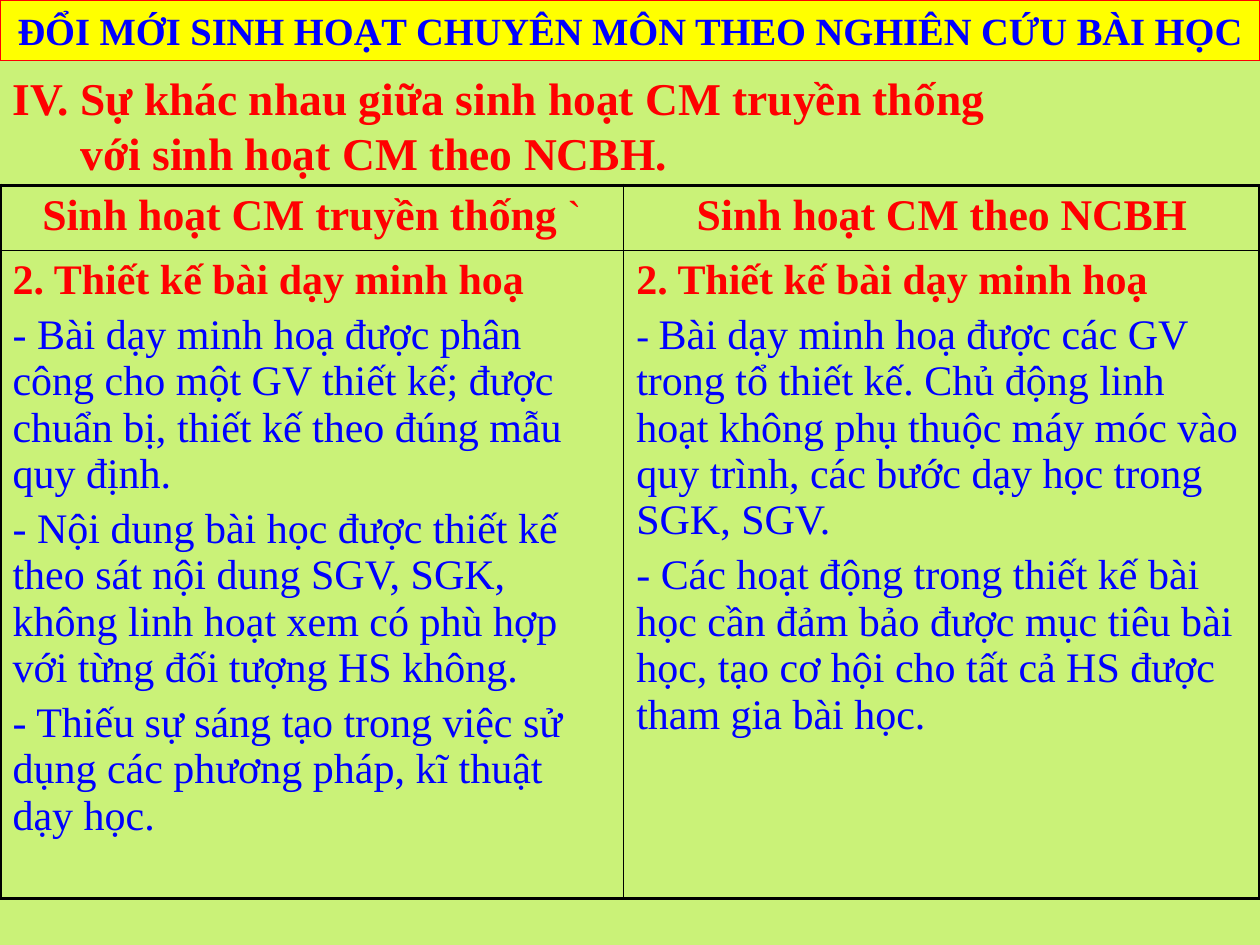
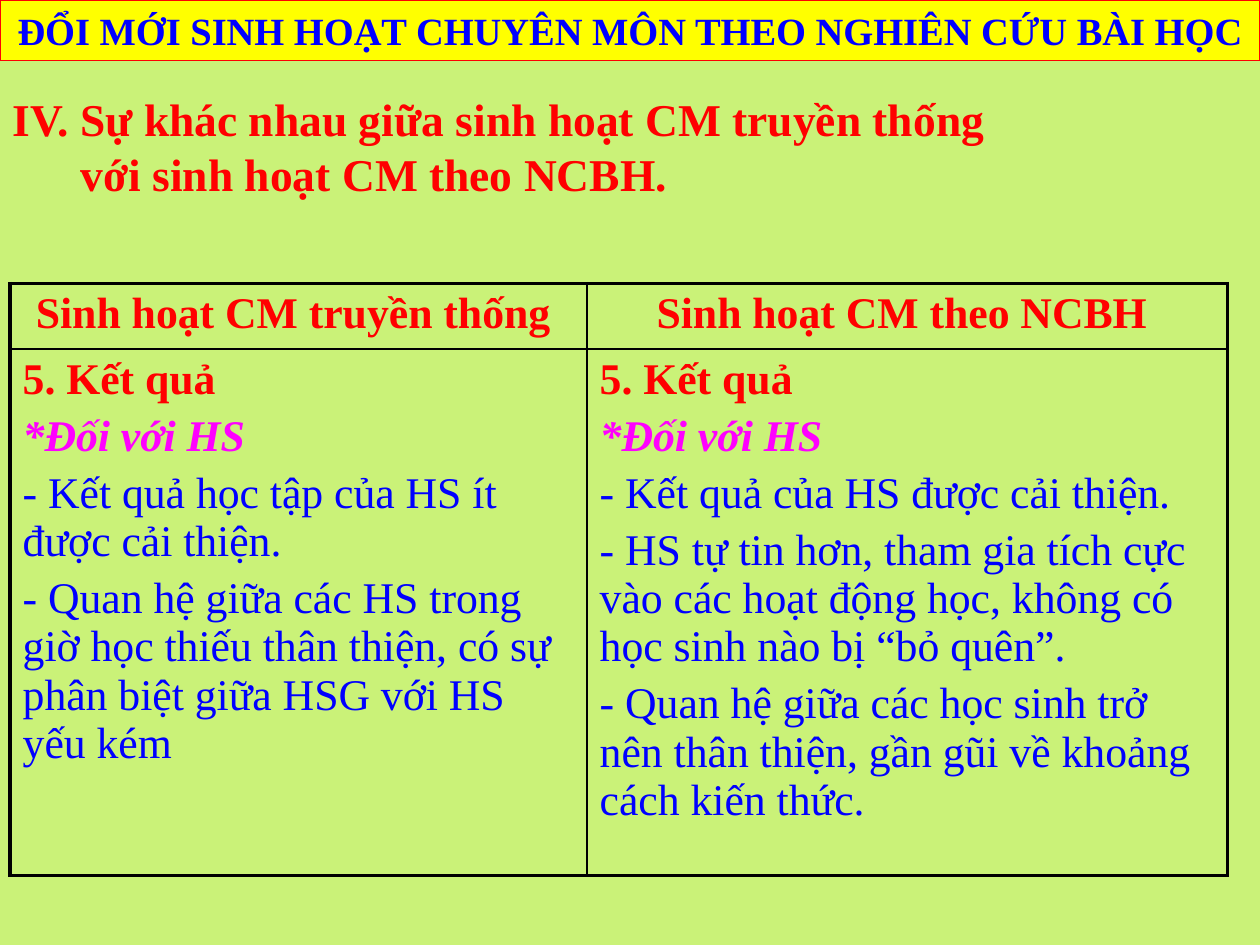
import dataclasses
import typing

import lxml.etree
import pptx
import pptx.dml.color
import pptx.enum.dml
import pptx.enum.shapes
import pptx.enum.text
import pptx.oxml.ns
import pptx.util

WIDTH, HEIGHT = pptx.util.Inches(10), pptx.util.Inches(7.5)
COLUMN, ROW = WIDTH / 10, HEIGHT / 7.5
FONT = "Times New Roman"
GREEN, YELLOW, RED = "CAF278", "FFFF00", "FF0000"
BLUE, MAGENTA, BLACK = "0000FF", "FF00FF", "000000"
OUTER, INNER = 2.25, 1
HEADER_ROWS = 0.52
HEADER_SIZE = 25
BANNER = "ĐỔI MỚI SINH HOẠT CHUYÊN MÔN THEO NGHIÊN CỨU BÀI HỌC"
SECTION = (
    "IV. Sự khác nhau giữa sinh hoạt CM truyền thống",
    "với sinh hoạt CM theo NCBH.",
)
LEFT = pptx.enum.text.PP_ALIGN.LEFT
CENTER = pptx.enum.text.PP_ALIGN.CENTER


class Style(typing.NamedTuple):
    color: str
    bold: bool = False
    italic: bool = False


HEADING = Style(RED, bold=True)
SUBHEADING = Style(MAGENTA, bold=True, italic=True)
POINT = Style(BLUE)
EMPHASIS = Style(BLUE, bold=True)


class Stretch(typing.NamedTuple):
    """Text that may depart from its paragraph's size and weight."""
    text: str
    size: float | None = None
    bold: bool | None = None


class Line(typing.NamedTuple):
    style: Style
    stretches: tuple[Stretch, ...]


def line(style: Style, text: str) -> Line:
    return Line(style, (Stretch(text),))


@dataclasses.dataclass(frozen=True)
class Comparison:
    """One slide; positions are in grid columns and rows."""
    section_top: float
    left: float
    top: float
    column_widths: tuple[float, float]
    body_rows: float
    body_size: float
    headers: tuple[Line, Line]
    bodies: tuple[tuple[Line, ...], tuple[Line, ...]]


COMPARISONS = (
    Comparison(
        section_top=0.5, left=0, top=1.47, column_widths=(4.95, 5.05),
        body_rows=5.14, body_size=24,
        headers=(
            Line(HEADING, (Stretch("Sinh hoạt CM truyền thống"),
                           Stretch(" `", 24, False))),
            line(HEADING, "Sinh hoạt CM theo NCBH"),
        ),
        bodies=(
            (
                line(HEADING, "2. Thiết kế bài dạy minh hoạ"),
                line(POINT, "- Bài dạy minh hoạ được phân công cho một GV thiết kế; "
                            "được chuẩn bị, thiết kế theo đúng mẫu quy định."),
                line(POINT, "- Nội dung bài học được thiết kế theo sát nội dung SGV, SGK, "
                            "không linh hoạt xem có phù hợp với từng đối tượng HS không."),
                line(POINT, "- Thiếu sự sáng tạo trong việc sử dụng các phương pháp, "
                            "kĩ thuật dạy học."),
            ),
            (
                line(HEADING, "2. Thiết kế bài dạy minh hoạ"),
                Line(POINT, (
                    Stretch("- ", 22),
                    Stretch("Bài dạy minh hoạ được các GV trong tổ thiết kế. Chủ động "
                            "linh hoạt không phụ thuộc máy móc vào quy trình, các bước "
                            "dạy học trong SGK, SGV."),
                )),
                line(POINT, "- Các hoạt động trong thiết kế bài học cần đảm bảo được mục "
                            "tiêu bài học, tạo cơ hội cho tất cả HS được tham gia bài học."),
            ),
        ),
    ),
    Comparison(
        section_top=0.67, left=0.08, top=2.25, column_widths=(4.58, 5.08),
        body_rows=4.18, body_size=25,
        headers=(
            line(HEADING, "Sinh hoạt CM truyền thống "),
            line(HEADING, "Sinh hoạt CM theo NCBH "),
        ),
        bodies=(
            (
                line(HEADING, "5. Kết quả"),
                line(SUBHEADING, "*Đối với HS"),
                line(POINT, "- Kết quả học tập của HS ít được cải thiện."),
                line(POINT, "- Quan hệ giữa các HS trong giờ học thiếu thân thiện, "
                            "có sự phân biệt giữa HSG với HS yếu kém"),
            ),
            (
                line(HEADING, "5. Kết quả"),
                line(SUBHEADING, "*Đối với HS"),
                line(POINT, "- Kết quả của HS được cải thiện."),
                line(POINT, "- HS tự tin hơn, tham gia tích cực vào các hoạt động học, "
                            "không có học sinh nào bị “bỏ quên”."),
                line(POINT, "- Quan hệ giữa các học sinh trở nên thân thiện, gần gũi "
                            "về khoảng cách kiến thức."),
            ),
        ),
    ),
)


def across(columns: float) -> int:
    return round(columns * COLUMN)


def down(rows: float) -> int:
    return round(rows * ROW)


def paint(fill, color: str) -> None:
    fill.solid()
    fill.fore_color.rgb = pptx.dml.color.RGBColor.from_string(color)


def write(frame, lines: typing.Sequence[Line], size: float, alignment=LEFT) -> None:
    frame.word_wrap = True
    for index, item in enumerate(lines):
        paragraph = frame.add_paragraph() if index else frame.paragraphs[0]
        paragraph.alignment = alignment
        if index:
            paragraph.space_before = pptx.util.Pt(size * 0.2)
        font = paragraph.font
        font.name, font.size = FONT, pptx.util.Pt(size)
        font.bold, font.italic = item.style.bold, item.style.italic
        paint(font.fill, item.style.color)
        for stretch in item.stretches:
            run = paragraph.add_run()
            run.text = stretch.text
            if stretch.size is not None:
                run.font.size = pptx.util.Pt(stretch.size)
            if stretch.bold is not None:
                run.font.bold = stretch.bold


def add_banner(slide) -> None:
    banner = slide.shapes.add_shape(
        pptx.enum.shapes.MSO_SHAPE.RECTANGLE, 0, 0, WIDTH, down(0.48))
    banner.shadow.inherit = False
    paint(banner.fill, YELLOW)
    paint(banner.line.fill, RED)
    banner.line.width = pptx.util.Pt(0.75)
    banner.text_frame.vertical_anchor = pptx.enum.text.MSO_ANCHOR.MIDDLE
    write(banner.text_frame, [line(EMPHASIS, BANNER)], 22, CENTER)


def place_section_title(slide, top: float) -> None:
    title = slide.shapes.title
    title.left, title.top, title.width, title.height = 0, down(top), WIDTH, down(0.97)
    frame = title.text_frame
    frame.auto_size = pptx.enum.text.MSO_AUTO_SIZE.NONE
    frame.vertical_anchor = pptx.enum.text.MSO_ANCHOR.TOP
    write(frame, [line(HEADING, text) for text in SECTION], 26)
    for paragraph in frame.paragraphs:
        paragraph.space_before = pptx.util.Pt(0)
        paragraph.line_spacing = pptx.util.Pt(31.4)
    indented = frame.paragraphs[1]._p.get_or_add_pPr()
    indented.set("marL", str(across(0.54)))
    indented.set("indent", "0")


def set_borders(cell, row: int, column: int) -> None:
    """Draw thick edges around the 2 × 2 table and thin ones inside it."""
    properties = cell._tc.get_or_add_tcPr()
    outer_edges = {"lnL": column == 0, "lnR": column == 1,
                   "lnT": row == 0, "lnB": row == 1}
    for position, (edge, is_outer) in enumerate(outer_edges.items()):
        weight = pptx.util.Pt(OUTER if is_outer else INNER)
        border = lxml.etree.Element(pptx.oxml.ns.qn(f"a:{edge}"), w=str(weight))
        fill = lxml.etree.SubElement(border, pptx.oxml.ns.qn("a:solidFill"))
        lxml.etree.SubElement(fill, pptx.oxml.ns.qn("a:srgbClr"), val=BLACK)
        properties.insert(position, border)


def add_comparison_table(slide, content: Comparison) -> None:
    row_heights = (HEADER_ROWS, content.body_rows)
    table = slide.shapes.add_table(
        2, 2, across(content.left), down(content.top),
        across(sum(content.column_widths)), down(sum(row_heights))).table
    table.first_row = table.horz_banding = False
    for column, width in zip(table.columns, content.column_widths):
        column.width = across(width)
    for row, height in zip(table.rows, row_heights):
        row.height = down(height)
    for column in range(2):
        header, body = table.cell(0, column), table.cell(1, column)
        write(header.text_frame, [content.headers[column]], HEADER_SIZE, CENTER)
        write(body.text_frame, content.bodies[column], content.body_size)
        for row, cell in enumerate((header, body)):
            cell.fill.background()
            set_borders(cell, row, column)


def main() -> None:
    presentation = pptx.Presentation()
    presentation.slide_width, presentation.slide_height = WIDTH, HEIGHT
    paint(presentation.slide_master.background.fill, GREEN)
    title_only = presentation.slide_layouts[5]
    for content in COMPARISONS:
        slide = presentation.slides.add_slide(title_only)
        add_comparison_table(slide, content)
        place_section_title(slide, content.section_top)
        add_banner(slide)
    presentation.save("out.pptx")


if __name__ == "__main__":
    main()
